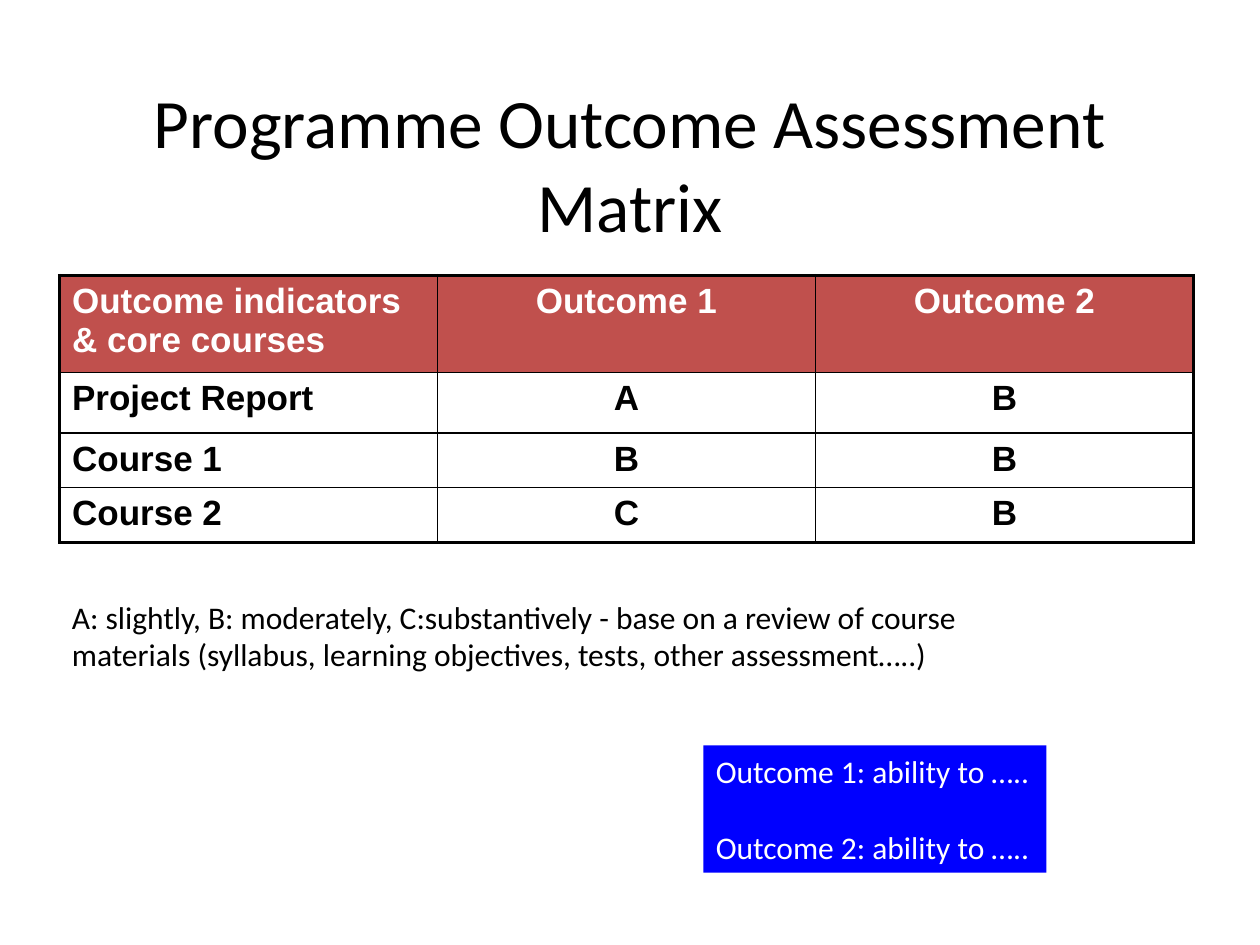
"""Build the Programme Outcome Assessment Matrix slide."""
from lxml import etree
from pptx import Presentation
from pptx.dml.color import RGBColor
from pptx.enum.shapes import MSO_SHAPE
from pptx.enum.text import MSO_ANCHOR, PP_ALIGN
from pptx.oxml.ns import qn
from pptx.util import Pt

LEFT, CENTER = PP_ALIGN.LEFT, PP_ALIGN.CENTER
TOP, MIDDLE = MSO_ANCHOR.TOP, MSO_ANCHOR.MIDDLE
RECT = MSO_SHAPE.RECTANGLE
BLACK, WHITE, RED, BLUE = "000000", "FFFFFF", "C0504D", "0000FF"


def rgb(value):
    return RGBColor.from_string(value)


def write(tf, lines, font, color, align=LEFT, anchor=TOP, wrap=True, gap=0):
    tf.word_wrap, tf.vertical_anchor = wrap, anchor
    for i, line in enumerate(lines):
        p = tf.paragraphs[0] if i == 0 else tf.add_paragraph()
        p.alignment = align
        p.space_before = Pt(gap if i else 0)
        r = p.add_run()
        r.text = line
        for name, value in font.items():
            setattr(r.font, name, value)
        r.font.color.rgb = rgb(color)


TITLE = {"name": "Calibri", "size": Pt(39.6)}
BODY = {"name": "Calibri", "size": Pt(18)}
CELL = {"name": "Arial", "size": Pt(20), "bold": True}

prs = Presentation()
prs.slide_width, prs.slide_height = Pt(720), Pt(540)
s = prs.slides.add_slide(prs.slide_layouts[6])

tb = s.shapes.add_textbox(Pt(54), Pt(48), Pt(612), Pt(90))
write(tb.text_frame, ["Programme Outcome Assessment Matrix"], TITLE, BLACK, CENTER, MIDDLE)

rows = [
    ["Outcome indicators & core courses", "Outcome 1", "Outcome 2"],
    ["Project Report", "A", "B"],
    ["Course 1", "B", "B"],
    ["Course 2", "C", "B"],
]
heights = [48, 34.75, 30, 29]
last_row, last_col = len(rows) - 1, len(rows[0]) - 1
table = s.shapes.add_table(len(rows), len(rows[0]), Pt(34), Pt(157.5), Pt(648), Pt(sum(heights))).table
for col in table.columns:
    col.width = Pt(216)
for i, (height, row) in enumerate(zip(heights, rows)):
    table.rows[i].height = Pt(height)
    for j, text in enumerate(row):
        cell = table.cell(i, j)
        write(cell.text_frame, [text], CELL, BLACK if i else WHITE, CENTER if j else LEFT)
        outer = {"lnL": j == 0, "lnR": j == last_col, "lnT": i == 0, "lnB": i == last_row}
        tcPr = cell._tc.get_or_add_tcPr()
        for side, thick in outer.items():
            ln = etree.SubElement(tcPr, qn(f"a:{side}"), w=str(Pt(2.25 if thick else 1)))
            fill = etree.SubElement(ln, qn("a:solidFill"))
            etree.SubElement(fill, qn("a:srgbClr"), val=BLACK)
        if i:
            cell.fill.background()
        else:
            cell.fill.solid()
            cell.fill.fore_color.rgb = rgb(RED)

tb = s.shapes.add_textbox(Pt(34), Pt(338), Pt(588), Pt(93.5))
write(tb.text_frame, [
    "A: slightly, B: moderately, C:substantively - base on a review of course "
    "materials (syllabus, learning objectives, tests, other assessment…..)"
], BODY, BLACK)

sp = s.shapes.add_shape(RECT, Pt(402), Pt(426), Pt(196), Pt(72.75))
sp.shadow.inherit = False
sp.fill.solid()
sp.fill.fore_color.rgb = rgb(BLUE)
sp.line.fill.background()
outcomes = [f"Outcome {n}: ability to ….." for n in (1, 2)]
write(sp.text_frame, outcomes, BODY, WHITE, wrap=False, gap=22)

prs.save("out.pptx")
